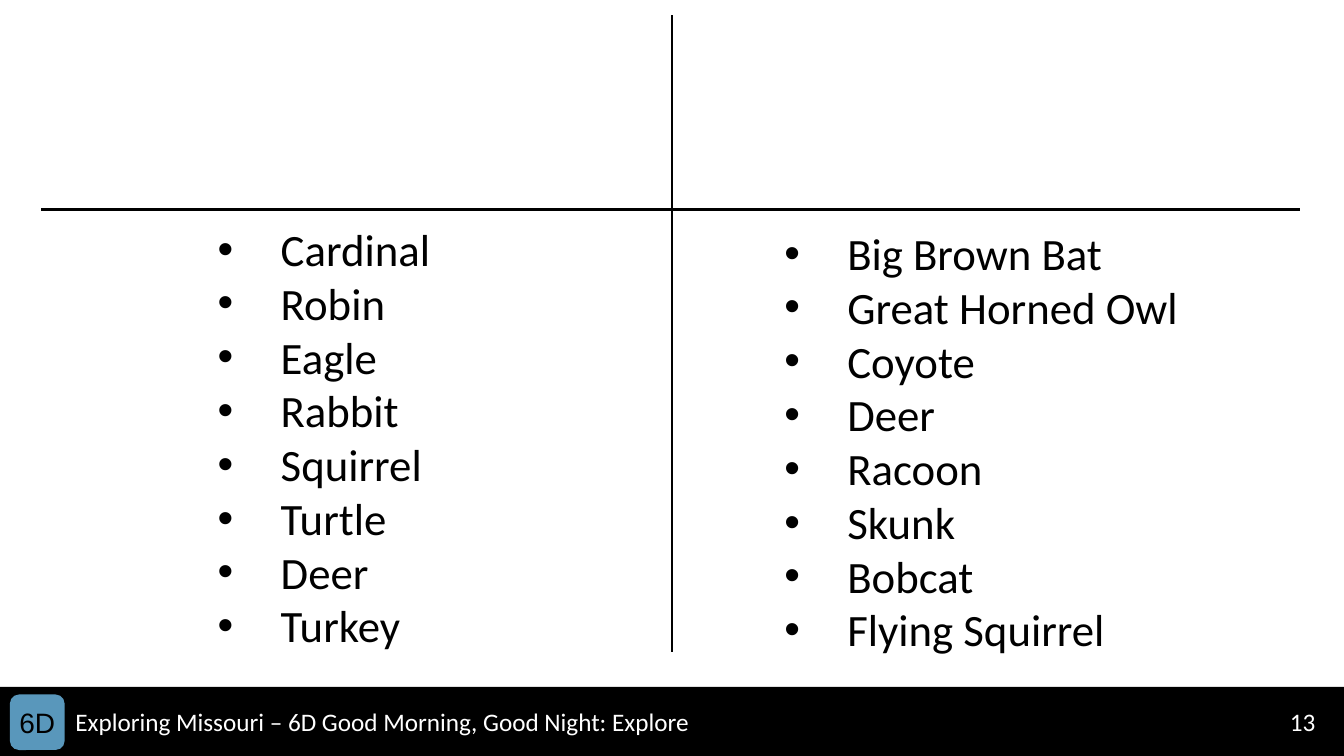
import lxml.etree
import pptx
import pptx.dml.color
import pptx.enum.shapes
import pptx.enum.text
import pptx.oxml.ns
import pptx.util

Cm = pptx.util.Cm
SHAPES = pptx.enum.shapes.MSO_SHAPE
ANCHOR = pptx.enum.text.MSO_ANCHOR
ALIGN = pptx.enum.text.PP_ALIGN


def color(value):
    return pptx.dml.color.RGBColor.from_string(value)


def write(frame, text, size=18, font="Calibri", ink="FFFFFF", align=ALIGN.LEFT,
          anchor=ANCHOR.TOP, indent=None):
    frame.word_wrap = True
    frame.auto_size = pptx.enum.text.MSO_AUTO_SIZE.NONE
    frame.vertical_anchor = anchor
    frame.text = text
    for paragraph in frame.paragraphs:
        paragraph.alignment = align
        paragraph.space_before = pptx.util.Pt(0)
        paragraph.font.size = pptx.util.Pt(size)
        paragraph.font.name = font
        paragraph.font.color.rgb = color(ink)
        if indent:
            properties = paragraph._p.get_or_add_pPr()
            properties.set("marL", str(indent))
            properties.set("indent", str(-indent))


deck = pptx.Presentation()
deck.slide_width = Cm(33.87)
deck.slide_height = Cm(19.05)
slide = deck.slides.add_slide(deck.slide_layouts[3])
heading, day_list, night_list = slide.placeholders
heading._element.getparent().remove(heading._element)

day_animals = ["Cardinal", "Robin", "Eagle", "Rabbit",
               "Squirrel", "Turtle", "Deer", "Turkey"]
night_animals = ["Big Brown Bat", "Great Horned Owl", "Coyote", "Deer",
                 "Racoon", "Skunk", "Bobcat", "Flying Squirrel"]
for animal_list, animals, left, top, width in [
    (day_list, day_animals, 5.23, 5.46, 7.52),
    (night_list, night_animals, 19.51, 5.56, 12.19),
]:
    animal_list.left, animal_list.top = Cm(left), Cm(top)
    animal_list.width, animal_list.height = Cm(width), Cm(11.2)
    write(animal_list.text_frame, "\n".join(animals),
          size=32, ink="000000", indent=Cm(1.59))

for x1, y1, x2, y2 in [(1.04, 5.28, 32.77, 5.28), (16.94, 0.38, 16.94, 16.43)]:
    divider = slide.shapes.add_connector(
        pptx.enum.shapes.MSO_CONNECTOR.STRAIGHT, Cm(x1), Cm(y1), Cm(x2), Cm(y2))
    divider.line.color.rgb = color("000000")
    divider.line.width = pptx.util.Pt(1.5)
    lxml.etree.SubElement(divider._element.spPr, pptx.oxml.ns.qn("a:effectLst"))

footer_bar = slide.shapes.add_shape(
    SHAPES.RECTANGLE, Cm(0), Cm(17.31), Cm(33.87), Cm(1.78))
lesson_badge = slide.shapes.add_shape(
    SHAPES.ROUNDED_RECTANGLE, Cm(0.25), Cm(17.5), Cm(1.38), Cm(1.4))
for panel, fill in [(footer_bar, "000000"), (lesson_badge, "5997BB")]:
    panel.shadow.inherit = False
    panel.fill.solid()
    panel.fill.fore_color.rgb = color(fill)
    panel.line.fill.background()

badge_text = lesson_badge.text_frame
badge_text.margin_left = badge_text.margin_right = 0
write(badge_text, "6D", size=20, font="Arial", ink="000000",
      align=ALIGN.CENTER, anchor=ANCHOR.MIDDLE)

for footer_text, left, width in [
    ("Exploring Missouri – 6D Good Morning, Good Night: Explore", 1.65, 19.89),
    ("13", 32.26, 1.37),
]:
    footer = slide.shapes.add_textbox(Cm(left), Cm(17.68), Cm(width), Cm(1.02))
    write(footer.text_frame, footer_text)

deck.save("out.pptx")
